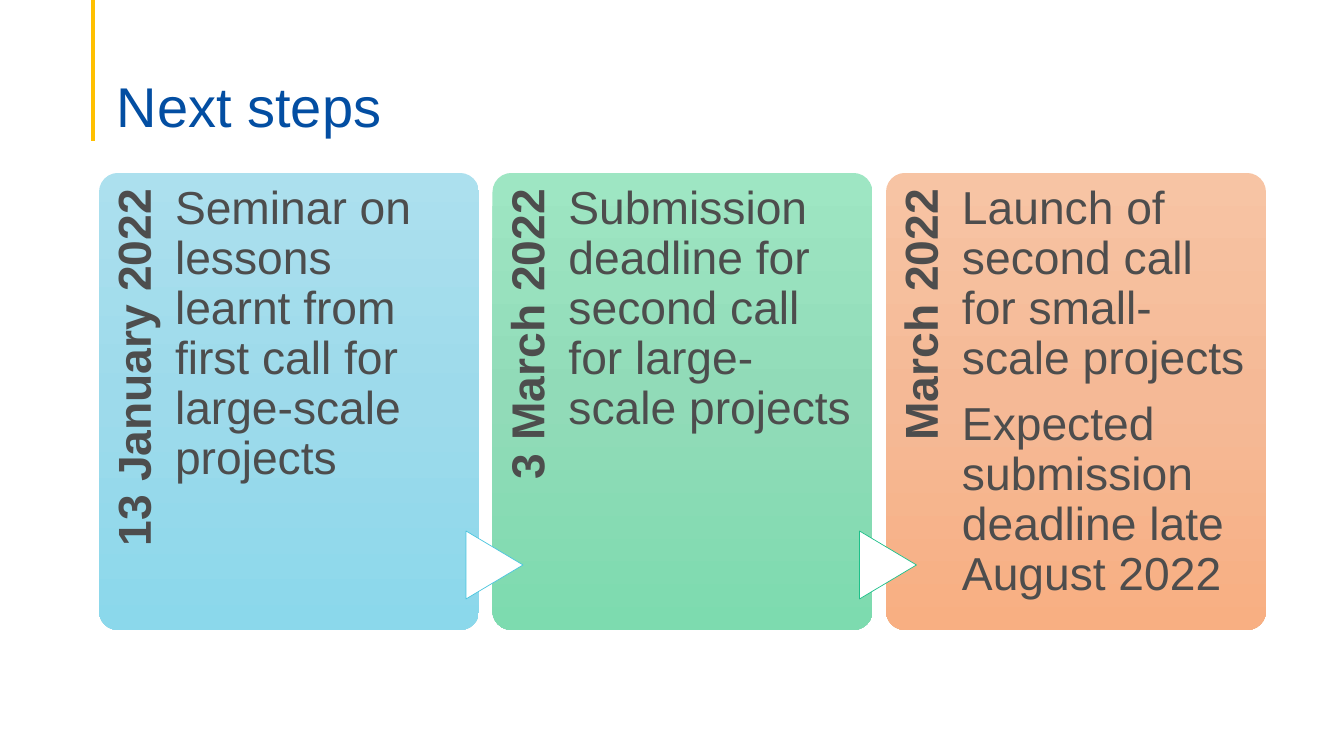
from copy import deepcopy

from lxml.etree import SubElement
from pptx import Presentation
from pptx.dml.color import RGBColor
from pptx.enum.shapes import MSO_CONNECTOR, MSO_SHAPE
from pptx.enum.text import MSO_ANCHOR as ANCHOR, PP_ALIGN as ALIGN
from pptx.oxml.ns import qn
from pptx.util import Pt

TITLE = "Next steps"
STEPS = [
    {"date": "13 January 2022",
     "texts": ["Seminar on lessons learnt from first call for large-scale projects"],
     "gradient": ["ACE0EE", "9DDAEB", "8BD8EB"], "arrow_line": "4BC5DE"},
    {"date": "3 March 2022",
     "texts": ["Submission deadline for second call for large-scale projects"],
     "gradient": ["9EE6C3", "91DBB8", "7DDBAF"], "arrow_line": "1EC08A"},
    {"date": "March 2022",
     "texts": ["Launch of second call for small-scale projects",
               "Expected submission deadline late August 2022"],
     "gradient": ["F7C4A4", "F5B996", "F8AF82"], "arrow_line": None},
]
TITLE_FORMAT = {"name": "Arial", "size": Pt(40)}
BODY_FORMAT = {"name": "Arial", "size": Pt(33)}
DATE_FORMAT = {**BODY_FORMAT, "bold": True}
TITLE_COLOR, TEXT_COLOR = "034EA2", "4D4D4D"

CARD_LEFT, CARD_TOP, CARD_WIDTH, CARD_HEIGHT = 99, 173, 380, 457
CARD_PITCH = 393.5
DATE_LENGTH, DATE_DEPTH, DATE_CENTER = 374, 76, (38, 187)
BODY_OFFSET, BODY_WIDTH = 76, 283
ARROW_WIDTH, ARROW_HEIGHT, ARROW_CENTER = 68, 57, (2, 392)


def px(value):
    return round(value * 914400 / 100.8)


def color(value):
    return RGBColor.from_string(value)


def add_text(box, texts, font_format, font_color, insets,
             align=ALIGN.LEFT, anchor=ANCHOR.TOP, space_after=0):
    shape = slide.shapes.add_textbox(*map(px, box))
    frame = shape.text_frame
    frame.word_wrap = True
    frame.vertical_anchor = anchor
    for side, inset in zip(("left", "top", "right", "bottom"), insets):
        setattr(frame, f"margin_{side}", px(inset))
    for index, text in enumerate(texts):
        paragraph = frame.add_paragraph() if index else frame.paragraphs[0]
        paragraph.alignment = align
        paragraph.line_spacing = 0.9
        paragraph.space_after = Pt(space_after)
        run = paragraph.add_run()
        run.text = text
        for name, value in font_format.items():
            setattr(run.font, name, value)
        run.font.color.rgb = color(font_color)
    return shape


def add_card(left, gradient):
    card = slide.shapes.add_shape(MSO_SHAPE.ROUNDED_RECTANGLE, px(left), px(CARD_TOP),
                                  px(CARD_WIDTH), px(CARD_HEIGHT))
    card.adjustments[0] = 0.05
    card.shadow.inherit = False
    card.line.fill.background()
    card.fill.gradient()
    card.fill.gradient_angle = 270
    # A third stop between the two default ones
    stops = card._element.spPr.find(qn("a:gradFill")).find(qn("a:gsLst"))
    stops.insert(1, deepcopy(stops[0]))
    for index, (stop, shade) in enumerate(zip(card.fill.gradient_stops, gradient)):
        stop.position = index / 2
        stop.color.rgb = color(shade)


def add_arrow(center_x, center_y, line_color):
    arrow = slide.shapes.add_shape(
        MSO_SHAPE.FLOWCHART_EXTRACT, px(center_x - ARROW_WIDTH / 2),
        px(center_y - ARROW_HEIGHT / 2), px(ARROW_WIDTH), px(ARROW_HEIGHT))
    arrow.rotation = 90
    arrow.shadow.inherit = False
    arrow.fill.solid()
    arrow.fill.fore_color.rgb = color("FFFFFF")
    arrow.line.color.rgb = color(line_color)
    arrow.line.width = Pt(0.5)


presentation = Presentation()
presentation.slide_width, presentation.slide_height = px(1344), px(756)
slide = presentation.slides.add_slide(presentation.slide_layouts[6])

# Accent line and title
accent = slide.shapes.add_connector(MSO_CONNECTOR.STRAIGHT, px(93), 0, px(93), px(141))
accent.line.color.rgb = color("FFC000")
accent.line.width = Pt(2.25)
SubElement(accent._element.spPr, qn("a:effectLst"))
add_text((107, 53, 1159, 87), [TITLE], TITLE_FORMAT, TITLE_COLOR, (10, 5, 10, 0),
         anchor=ANCHOR.BOTTOM)

# Step cards, each with an arrow from the card before
for index, step in enumerate(STEPS):
    left = CARD_LEFT + index * CARD_PITCH
    add_card(left, step["gradient"])
    date_box = (left + DATE_CENTER[0] - DATE_LENGTH / 2,
                CARD_TOP + DATE_CENTER[1] - DATE_DEPTH / 2, DATE_LENGTH, DATE_DEPTH)
    date = add_text(date_box, [step["date"]], DATE_FORMAT, TEXT_COLOR, (0, 12, 16, 0),
                    align=ALIGN.RIGHT)
    date.rotation = 270
    if index:
        add_arrow(left + ARROW_CENTER[0], CARD_TOP + ARROW_CENTER[1],
                  STEPS[index - 1]["arrow_line"])
    add_text((left + BODY_OFFSET, CARD_TOP, BODY_WIDTH, CARD_HEIGHT), step["texts"],
             BODY_FORMAT, TEXT_COLOR, (0, 12, 0, 0), space_after=11.5)

presentation.save("out.pptx")
